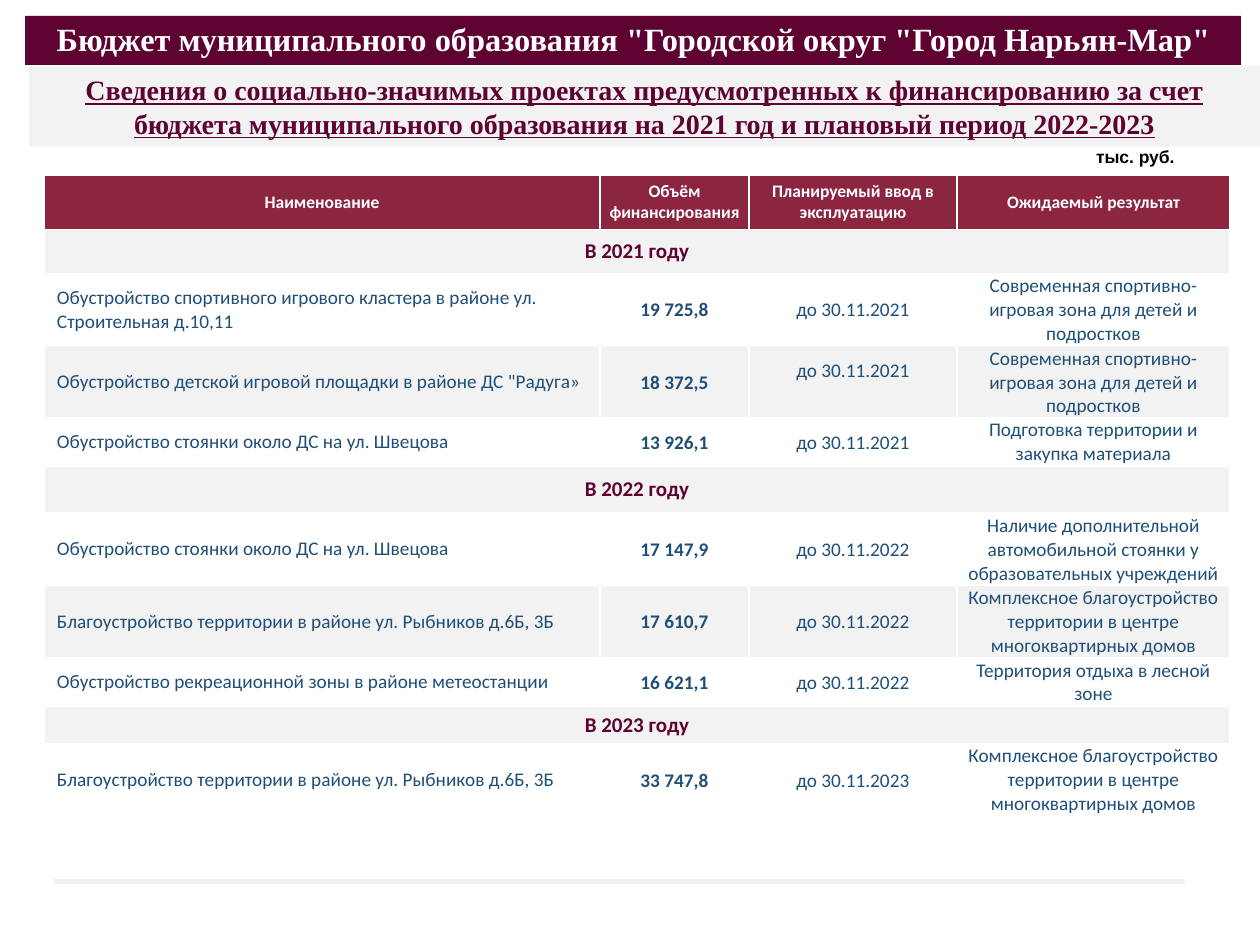
import pptx
import pptx.dml.color
import pptx.enum.shapes
import pptx.enum.text
import pptx.oxml
import pptx.oxml.ns
import pptx.util

EMU_PER_PX = 914400 / 126
PLUM, WINE, NAVY = "5E0231", "8C2540", "1F4E79"
WHITE, GREY, BLACK = "FFFFFF", "F2F2F2", "000000"
CENTER = pptx.enum.text.PP_ALIGN.CENTER
LEFT = pptx.enum.text.PP_ALIGN.LEFT
TOP = pptx.enum.text.MSO_ANCHOR.TOP
MIDDLE = pptx.enum.text.MSO_ANCHOR.MIDDLE
BOTTOM = pptx.enum.text.MSO_ANCHOR.BOTTOM

# Margins in px: left, top, right, bottom
WIDE = (13, 6, 13, 6)
HEADER = (0, 6, 0, 6)
TIGHT = (1, 1, 1, 0)
RAISED = (1, 1, 1, 23)
FLUSH = (9, 0, 9, 0)


def px(length):
    return pptx.util.Emu(round(length * EMU_PER_PX))


def rgb(color):
    return pptx.dml.color.RGBColor.from_string(color)


def paint(target, color):
    target.fill.solid()
    target.fill.fore_color.rgb = rgb(color)


def set_margins(target, margins):
    (target.margin_left, target.margin_top,
     target.margin_right, target.margin_bottom) = map(px, margins)


class BudgetSlide:
    def __init__(self, slide, table_font="Calibri"):
        self.slide = slide
        self.table_font = table_font

    def set_text(self, frame, text, size, color, font, bold=True,
                 align=CENTER, underline=None, line_spacing=None):
        paragraph = frame.paragraphs[0]
        paragraph.text = text
        paragraph.alignment = align
        if line_spacing:
            paragraph.line_spacing = line_spacing
        style = paragraph.font
        style.name, style.size = font, pptx.util.Pt(size)
        style.bold, style.underline = bold, underline
        style.color.rgb = rgb(color)

    def band(self, left, top, width, height, color):
        shape = self.slide.shapes.add_shape(
            pptx.enum.shapes.MSO_SHAPE.RECTANGLE,
            px(left), px(top), px(width), px(height))
        shape.shadow.inherit = False
        shape.line.fill.background()
        paint(shape, color)
        return shape

    def heading(self, bounds, fill, text, size, color, anchor=MIDDLE, **style):
        frame = self.band(*bounds, fill).text_frame
        frame.word_wrap = True
        frame.vertical_anchor = anchor
        self.set_text(frame, text, size, color, "Times New Roman", **style)

    def label(self, left, top, width, height, text):
        frame = self.slide.shapes.add_textbox(
            px(left), px(top), px(width), px(height)).text_frame
        frame.word_wrap = True
        set_margins(frame, (0, 1, 0, 1))
        self.set_text(frame, text, 10, BLACK, "Arial", align=LEFT)

    def cell(self, cell, text, fill, size, color, margins=WIDE,
             anchor=MIDDLE, **style):
        paint(cell, fill)
        cell.vertical_anchor = anchor
        set_margins(cell, margins)
        self.set_text(cell.text_frame, text, size, color, self.table_font,
                      **style)
        self.cell_borders(cell)

    def cell_borders(self, cell):
        properties = cell._tc.get_or_add_tcPr()
        for position, side in enumerate(("lnL", "lnR", "lnT", "lnB")):
            properties.insert(position, pptx.oxml.parse_xml(
                f'<a:{side} {pptx.oxml.ns.nsdecls("a")} w="12700"><a:solidFill>'
                f'<a:srgbClr val="{WHITE}"/></a:solidFill></a:{side}>'))

    def table(self, left, top, widths, heights, header, rows):
        table = self.slide.shapes.add_table(
            len(rows) + 1, len(widths), px(left), px(top),
            px(sum(widths)), px(sum(heights))).table
        table.horz_banding = False
        for column, width in zip(table.columns, widths):
            column.width = px(width)
        for row, height in zip(table.rows, heights):
            row.height = px(height)
        for column, text in enumerate(header):
            self.cell(table.cell(0, column), text, WINE, 10, WHITE,
                      HEADER if column else WIDE)
        for number, row in enumerate(rows, start=1):
            fill = GREY if number in (3, 7) else WHITE
            if isinstance(row, str):
                self.year_row(table, number, row)
            else:
                self.project_row(table, number, fill, *row)

    def year_row(self, table, number, year):
        last = len(table.columns) - 1
        table.cell(number, 0).merge(table.cell(number, last))
        self.cell(table.cell(number, 0), year, GREY, 12, PLUM)

    def project_row(self, table, number, fill, name, amount, date, result,
                    date_margins=TIGHT, result_margins=TIGHT):
        result_anchor = TOP if result_margins == FLUSH else MIDDLE
        parts = (
            (name, dict(bold=False, align=LEFT)),
            (amount, dict(margins=TIGHT)),
            (date, dict(bold=False, margins=date_margins)),
            (result, dict(bold=False, margins=result_margins,
                          anchor=result_anchor)),
        )
        for column, (text, style) in enumerate(parts):
            self.cell(table.cell(number, column), text, fill, 11, NAVY, **style)


def main():
    deck = pptx.Presentation()
    deck.slide_width, deck.slide_height = px(1260), px(945)
    budget = BudgetSlide(deck.slides.add_slide(deck.slide_layouts[6]))

    parking = "Обустройство стоянки около ДС на ул. Швецова"
    courtyards = "Благоустройство территории в районе ул. Рыбников д.6Б, 3Б"
    sports_zone = "Современная спортивно-игровая зона для детей и подростков"
    improvement = ("Комплексное благоустройство территории в центре "
                   "многоквартирных домов")
    header = ("Наименование", "Объём финансирования",
              "Планируемый ввод в эксплуатацию", "Ожидаемый результат")
    rows = (
        "В 2021 году",
        ("Обустройство спортивного игрового кластера в районе "
         "ул. Строительная д.10,11", "19 725,8", "до 30.11.2021", sports_zone),
        ('Обустройство детской игровой площадки в районе ДС "Радуга»',
         "18 372,5", "до 30.11.2021", sports_zone, RAISED),
        (parking, "13 926,1", "до 30.11.2021",
         "Подготовка территории и закупка материала", TIGHT, FLUSH),
        "В 2022 году",
        (parking, "17 147,9", "до 30.11.2022",
         "Наличие дополнительной автомобильной стоянки у образовательных "
         "учреждений"),
        (courtyards, "17 610,7", "до 30.11.2022", improvement),
        ("Обустройство рекреационной зоны в районе метеостанции",
         "16 621,1", "до 30.11.2022", "Территория отдыха в лесной зоне"),
        "В 2023 году",
        (courtyards, "33 747,8", "до 30.11.2023", improvement, TIGHT, FLUSH),
    )

    budget.band(54, 879, 1131, 5, GREY)
    budget.heading(
        (29, 66, 1231, 81), GREY,
        "Сведения о социально-значимых проектах предусмотренных к "
        "финансированию за счет бюджета муниципального образования на "
        "2021 год и плановый период 2022-2023", 16, PLUM, underline=True)
    budget.table(44, 175, (556, 149, 208, 273),
                 (54, 44, 72, 69, 48, 47, 72, 71, 48, 38, 72), header, rows)
    budget.label(1096, 145, 135, 24, "тыс. руб.")
    budget.heading(
        (25, 16, 1216, 49), PLUM,
        'Бюджет муниципального образования "Городской округ '
        '"Город Нарьян-Мар"', 18.5, WHITE, anchor=BOTTOM, line_spacing=0.9)
    deck.save("out.pptx")


if __name__ == "__main__":
    main()
